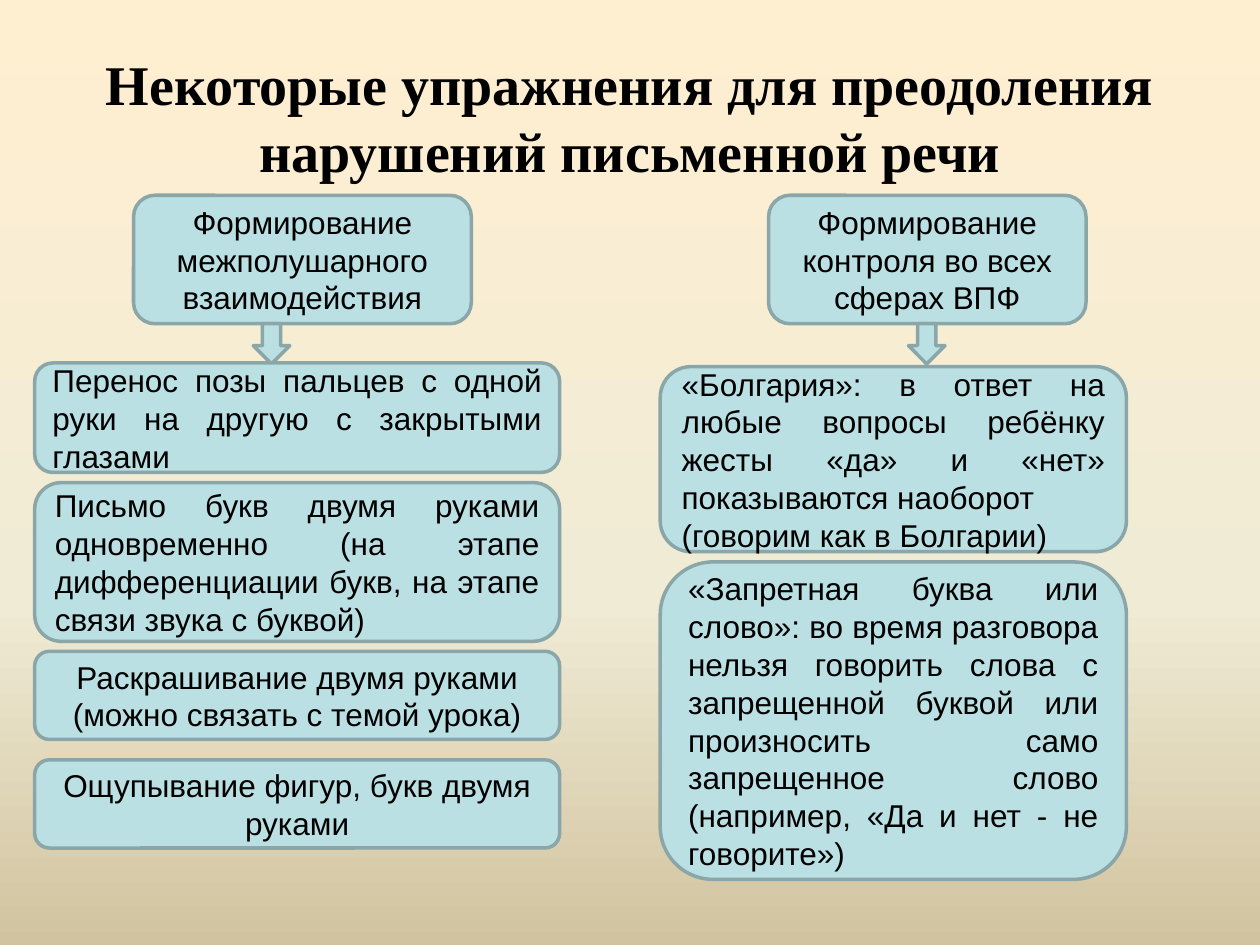
from copy import deepcopy
from dataclasses import dataclass

from pptx import Presentation
from pptx.dml.color import RGBColor as RGB
from pptx.enum.shapes import MSO_SHAPE as Preset
from pptx.enum.text import MSO_ANCHOR as Anchor, MSO_AUTO_SIZE as AutoSize, PP_ALIGN as Align
from pptx.oxml.ns import qn
from pptx.util import Pt


@dataclass(frozen=True)
class Theme:
    ink: str = "000000"
    fill: str = "BBE0E3"
    outline: str = "8AA6A8"
    background: tuple = ((0, "FFEFD1"), (0.64, "F0EBD5"), (1, "D1C39F"))
    title_font: str = "Times New Roman"
    body_font: str = "Arial"
    title_size: int = 32
    body_size: int = 18
    outline_width: int = 2


class ExerciseSlide:
    def __init__(self, deck, theme):
        self.theme = theme
        self.slide = deck.slides.add_slide(deck.slide_layouts[5])

    def background(self):
        fill = self.slide.background.fill
        fill.gradient()
        fill.gradient_angle = 270
        stops = self.slide.element.find(".//" + qn("a:gsLst"))
        stops.append(deepcopy(stops[-1]))
        for stop, (position, color) in zip(fill.gradient_stops, self.theme.background):
            stop.position = position
            stop.color.rgb = RGB.from_string(color)

    def set_text(self, frame, text, align, font, size, bold=False):
        frame.text = text
        frame.word_wrap = True
        frame.auto_size = AutoSize.NONE
        frame.vertical_anchor = Anchor.MIDDLE
        for paragraph in frame.paragraphs:
            paragraph.alignment = align
            for run in paragraph.runs:
                run.font.name = font
                run.font.size = Pt(size)
                run.font.bold = bold
                run.font.color.rgb = RGB.from_string(self.theme.ink)

    def title(self, text, left, top, width, height):
        heading = self.slide.shapes.title
        heading.left, heading.top = Pt(left), Pt(top)
        heading.width, heading.height = Pt(width), Pt(height)
        self.set_text(heading.text_frame, text, Align.CENTER,
                      self.theme.title_font, self.theme.title_size, True)

    def panel(self, preset, left, top, width, height):
        panel = self.slide.shapes.add_shape(preset, Pt(left), Pt(top), Pt(width), Pt(height))
        panel.shadow.inherit = False
        panel.fill.solid()
        panel.fill.fore_color.rgb = RGB.from_string(self.theme.fill)
        panel.line.color.rgb = RGB.from_string(self.theme.outline)
        panel.line.width = Pt(self.theme.outline_width)
        return panel

    def card(self, text, left, top, width, height, align=Align.CENTER):
        card = self.panel(Preset.ROUNDED_RECTANGLE, left, top, width, height)
        self.set_text(card.text_frame, text, align, self.theme.body_font, self.theme.body_size)

    def arrow(self, left, top, width=20.9, height=23):
        self.panel(Preset.DOWN_ARROW, left, top, width, height)

    def column(self, goal, goal_left, goal_width, arrow_left, left, width, exercises):
        self.card(goal, goal_left, 111.6, goal_width, 73.4)
        self.arrow(arrow_left, 185)
        for text, top, height, align in exercises:
            self.card(text, left, top, width, height, align)


def main():
    deck = Presentation()
    deck.slide_width, deck.slide_height = Pt(720), Pt(540)
    page = ExerciseSlide(deck, Theme())
    page.background()
    page.title("Некоторые упражнения для преодоления нарушений письменной речи", 36, 21.6, 648, 90)
    page.column(
        "Формирование межполушарного взаимодействия", 76.3, 193, 144.7, 19.8, 300,
        [
            ("Перенос позы пальцев с одной руки на другую с закрытыми глазами",
             207.4, 62.6, Align.JUSTIFY),
            ("Письмо букв двумя руками одновременно (на этапе дифференциации букв, "
             "на этапе связи звука с буквой)", 275.8, 90.7, Align.JUSTIFY),
            ("Раскрашивание двумя руками (можно связать с темой урока)",
             372.2, 50.4, Align.CENTER),
            ("Ощупывание фигур, букв двумя руками", 434.2, 50.4, Align.CENTER),
        ],
    )
    page.column(
        "Формирование контроля во всех сферах ВПФ", 439.2, 181.4, 519.1, 377.3, 266.4,
        [
            ("«Болгария»: в ответ на любые вопросы ребёнку жесты «да» и «нет» "
             "показываются наоборот\n(говорим как в Болгарии)", 209.5, 105.8, Align.JUSTIFY),
            ("«Запретная буква или слово»: во время разговора нельзя говорить слова "
             "с запрещенной буквой или произносить само запрещенное слово "
             "(например, «Да и нет - не говорите»)", 321.1, 181.4, Align.JUSTIFY),
        ],
    )
    deck.save("out.pptx")


if __name__ == "__main__":
    main()
